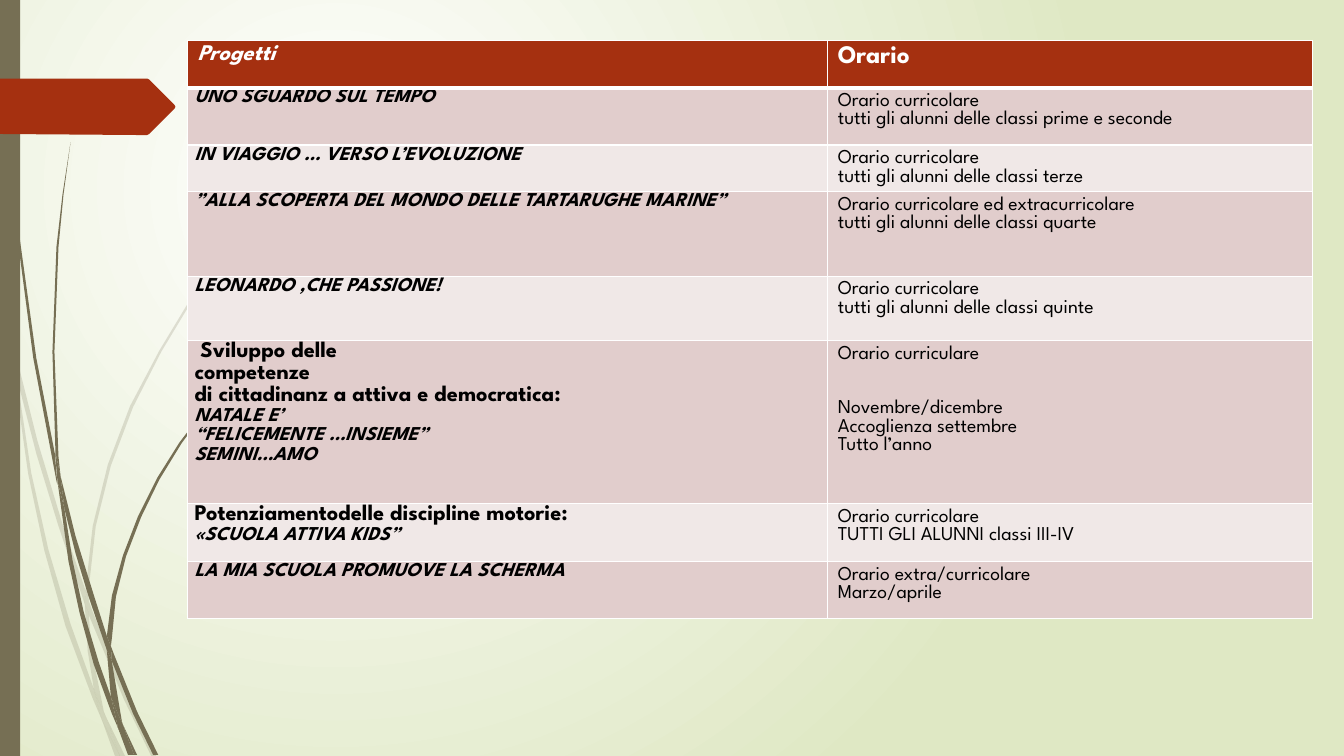
from lxml import etree
from pptx import Presentation
from pptx.dml.color import RGBColor
from pptx.oxml.ns import qn
from pptx.enum.shapes import MSO_SHAPE
from pptx.util import Inches, Pt

RECTANGLE = MSO_SHAPE.RECTANGLE
COLORS = {"olive": "766F54", "rust": "A53010", "white": "FFFFFF", "black": "000000",
          "rose": "E1CDCC", "pale": "F0E8E7", "green": "DFE8C4"}

# Grass blades: outlines as x, y pairs in inches
PALE_GRASS = [
    [(.11, 3.5), (.09, 3.22), (0, 2.82), (0, 2.99), (.1, 3.44)],
    [(.58, 5.22), (.84, 5.99), (.85, 5.86), (.62, 5.2), (.37, 4.37), (.14, 3.45), (.17, 3.76),
     (.36, 4.5)],
    [(.92, 6.07), (.88, 5.96), (.88, 6.1), (1.23, 6.94), (1.5, 7.5), (1.55, 7.5), (1.27, 6.92)],
    [(1.19, 7.5), (1.24, 7.5), (1.05, 7.11)],
    [(.93, 6.83), (.7, 6.19), (.48, 5.45), (.31, 4.69), (.17, 3.76), (.11, 3.5), (.28, 4.7),
     (.44, 5.46), (.65, 6.21), (.92, 6.93), (1.01, 7.14), (.99, 7.07)],
    [(.84, 5.99), (.87, 6.46), (.93, 6.83), (.96, 6.92), (1.05, 7.11), (1.03, 7.06), (.91, 6.46),
     (.88, 6.1), (.88, 6.08)],
    [(.88, 5.84), (.95, 5.22), (1.1, 4.62), (1.32, 4.04), (1.6, 3.49), (1.92, 2.96), (2.29, 2.45),
     (2.68, 1.98), (2.9, 1.75), (3.12, 1.54), (3.12, 1.53), (2.89, 1.75), (2.68, 1.97),
     (2.28, 2.44), (1.9, 2.95), (1.58, 3.48), (1.29, 4.03), (1.07, 4.61), (.92, 5.22),
     (.85, 5.84), (.85, 5.86), (.88, 5.96)],
    [(1.01, 7.14), (1.14, 7.5), (1.19, 7.5)],
    [(.88, 6.08), (.88, 6.1), (.88, 5.96), (.85, 5.86), (.84, 5.99)],
    [(.96, 6.92), (.93, 6.83), (.99, 7.07), (1.01, 7.14), (1.19, 7.5), (1.05, 7.11)],
]
DARK_GRASS = [
    [(.07, 1.1), (.17, 2.33), (.33, 3.55), (.56, 4.77), (.57, 4.81), (.55, 4.57), (.55, 4.53),
     (.36, 3.55), (.19, 2.32), (.08, 1.09), (.05, .48), (.04, 0), (.03, 0), (.04, .48)],
    [(.88, 5.92), (1.06, 6.45), (1.06, 6.31), (.93, 5.9), (.75, 5.32), (.6, 4.72), (.64, 5.05),
     (.75, 5.49)],
    [(1.13, 6.49), (1.1, 6.41), (1.11, 6.56), (1.32, 7.08), (1.52, 7.49), (1.57, 7.49),
     (1.36, 7.06)],
    [(1.1, 6.91), (.98, 6.57), (.83, 6.07), (.72, 5.56), (.64, 5.05), (.57, 4.77), (.68, 5.57),
     (.79, 6.08), (.93, 6.59), (1.11, 7.08), (1.17, 7.22), (1.16, 7.17)],
    [(.6, 4.72), (.58, 4.53), (.54, 3.49), (.58, 2.45), (.63, 1.93), (.7, 1.41), (.62, 1.93),
     (.56, 2.45), (.52, 3.49), (.55, 4.49)],
    [(1.33, 7.49), (1.36, 7.49), (1.22, 7.19)],
    [(.57, 4.77), (.64, 5.05), (.6, 4.72), (.55, 4.49), (.55, 4.53)],
    [(1.11, 6.33), (1.15, 5.92), (1.25, 5.52), (1.4, 5.13), (1.58, 4.76), (1.8, 4.4),
     (2.05, 4.06), (2.31, 3.74), (2.45, 3.59), (2.61, 3.44), (2.6, 3.44), (2.45, 3.58),
     (2.31, 3.73), (2.04, 4.05), (1.78, 4.39), (1.56, 4.74), (1.37, 5.12), (1.22, 5.51),
     (1.11, 5.91), (1.06, 6.31), (1.1, 6.41)],
    [(1.17, 7.22), (1.27, 7.49), (1.31, 7.49)],
    [(1.06, 6.45), (1.1, 6.91), (1.16, 7.06), (1.22, 7.19), (1.21, 7.16), (1.11, 6.56),
     (1.09, 6.51)],
    [(1.06, 6.45), (1.09, 6.51), (1.11, 6.56), (1.1, 6.41), (1.06, 6.31)],
    [(1.16, 7.06), (1.1, 6.91), (1.16, 7.17), (1.17, 7.22), (1.3, 7.49), (1.33, 7.49),
     (1.22, 7.19)],
]
PAGE_ARROW = [(1.73, 1.08), (1.48, 1.33), (1.46, 1.34), (1.36, 1.34), (0, 1.33), (0, .78),
              (1.46, .78), (1.48, .79), (1.73, 1.04), (1.74, 1.06)]

# Table rows: height, project lines, timetable lines
PROJECTS = [
    (.57, ["UNO SGUARDO SUL TEMPO"],
     ["Orario curricolare", "tutti gli alunni delle classi prime e seconde"]),
    (.46, ["IN VIAGGIO … VERSO L’EVOLUZIONE"],
     ["Orario curricolare", "tutti gli alunni delle classi terze"]),
    (.84, ["”ALLA SCOPERTA DEL MONDO DELLE TARTARUGHE MARINE”"],
     ["Orario curricolare ed extracurricolare", "tutti gli alunni delle classi quarte"]),
    (.64, ["LEONARDO ,CHE PASSIONE!"],
     ["Orario curricolare", "tutti gli alunni delle classi quinte"]),
    (1.62, [" Sviluppo delle", "competenze", "di cittadinanz a attiva e democratica:",
            "NATALE E’", "“FELICEMENTE …INSIEME”", "SEMINI…AMO"],
     ["Orario curriculare", "Novembre/dicembre", "Accoglienza settembre", "Tutto l’anno"]),
    (.57, ["Potenziamentodelle discipline motorie:", "«SCUOLA ATTIVA KIDS”"],
     ["Orario curricolare", "TUTTI GLI ALUNNI classi III-IV"]),
    (.57, ["LA MIA SCUOLA PROMUOVE LA SCHERMA"], ["Orario extra/curricolare", "Marzo/aprile"]),
]
HEADINGS = PROJECTS[4][1][:3] + PROJECTS[5][1][:1]


class SlideBuilder:
    font = "League Spartan"

    def __init__(self, page):
        self.page = page

    def background(self, inner, outer):
        fill = self.page.background.fill
        fill.gradient()
        for stop, color, position in zip(fill.gradient_stops, (inner, outer), (0, 1)):
            stop.color.rgb = RGBColor.from_string(COLORS[color])
            stop.position = position
        gradient = self.page.background._cSld.find(".//" + qn("a:gradFill"))
        gradient.remove(gradient.find(qn("a:lin")))
        circle = etree.SubElement(gradient, qn("a:path"), {"path": "circle"})
        etree.SubElement(circle, qn("a:fillToRect"),
                         {"l": "50000", "t": "50000", "r": "100000", "b": "100000"})

    def paint(self, shape, color, opacity=100):
        shape.shadow.inherit = False
        shape.fill.solid()
        shape.fill.fore_color.rgb = RGBColor.from_string(COLORS[color])
        shape.line.fill.background()
        if opacity < 100:
            tone = shape._element.spPr.find(".//" + qn("a:srgbClr"))
            etree.SubElement(tone, qn("a:alpha"), {"val": str(opacity * 1000)})

    def outline(self, shapes, points, color, opacity=100):
        corners = [(Inches(x), Inches(y)) for x, y in points]
        builder = shapes.build_freeform(*corners[0])
        builder.add_line_segments(corners[1:], close=True)
        self.paint(builder.convert_to_shape(), color, opacity)

    def grass(self, blades, opacity=100):
        group = self.page.shapes.add_group_shape()
        for blade in blades:
            self.outline(group.shapes, blade, "olive", opacity)

    def bar(self, left, top, width, height, color):
        box = self.page.shapes.add_shape(RECTANGLE, Inches(left), Inches(top),
                                         Inches(width), Inches(height))
        self.paint(box, color)

    def table(self, left, top, widths, heights):
        frame = self.page.shapes.add_table(len(heights), len(widths), Inches(left), Inches(top),
                                           Inches(sum(widths)), Inches(sum(heights)))
        for column, width in zip(frame.table.columns, widths):
            column.width = Inches(width)
        for row, height in zip(frame.table.rows, heights):
            row.height = Inches(height)
        return frame.table

    def cell(self, cell, lines, fill, color="black", top=1, bottom=1):
        """Each line is text, size, bold, italic."""
        cell.fill.solid()
        cell.fill.fore_color.rgb = RGBColor.from_string(COLORS[fill])
        properties = cell._tc.get_or_add_tcPr()
        for index, (side, width) in enumerate((("L", 1), ("R", 1), ("T", top), ("B", bottom))):
            border = etree.Element(qn("a:ln" + side), {"w": str(Pt(width))})
            solid = etree.SubElement(border, qn("a:solidFill"))
            etree.SubElement(solid, qn("a:srgbClr"), {"val": COLORS["white"]})
            properties.insert(index, border)
        cell.text_frame.text = "\n".join(line[0] for line in lines)
        for para, (_, size, bold, italic) in zip(cell.text_frame.paragraphs, lines):
            for span in para.runs:
                span.font.name = self.font
                span.font.size = Pt(size)
                span.font.bold = bold
                span.font.italic = italic
                span.font.color.rgb = RGBColor.from_string(COLORS[color])


def main():
    deck = Presentation()
    deck.slide_width, deck.slide_height = Inches(13.33), Inches(7.5)
    builder = SlideBuilder(deck.slides.add_slide(deck.slide_layouts[6]))

    # Backdrop
    builder.background("white", "green")
    builder.grass(PALE_GRASS, opacity=20)
    builder.grass(DARK_GRASS)
    builder.bar(0, 0, .2, 7.5, "olive")
    builder.outline(builder.page.shapes, PAGE_ARROW, "rust")

    # Project table
    table = builder.table(1.86, .4, [6.35, 4.81], [.47] + [row[0] for row in PROJECTS])
    builder.cell(table.cell(0, 0), [("Progetti", 16, True, True)], "rust", "white", bottom=3)
    builder.cell(table.cell(0, 1), [("Orario", 18, True, False)], "rust", "white", bottom=3)
    for number, (_, projects, times) in enumerate(PROJECTS, start=1):
        fill = "rose" if number % 2 else "pale"
        top = 3 if number == 1 else 1
        project, timetable = table.cell(number, 0), table.cell(number, 1)
        project.margin_left = project.margin_right = Inches(.07)
        project.margin_top = project.margin_bottom = 0
        builder.cell(project, [(text, 16, True, False) if text in HEADINGS
                               else (text, 14, True, True) for text in projects], fill, top=top)
        for para in project.text_frame.paragraphs:
            para.line_spacing = 1.07
        builder.cell(timetable, [(text, 14, False, False) for text in times], fill, top=top)
    table.cell(5, 1).text_frame.paragraphs[1].space_before = Pt(26)

    deck.save("out.pptx")


if __name__ == "__main__":
    main()
